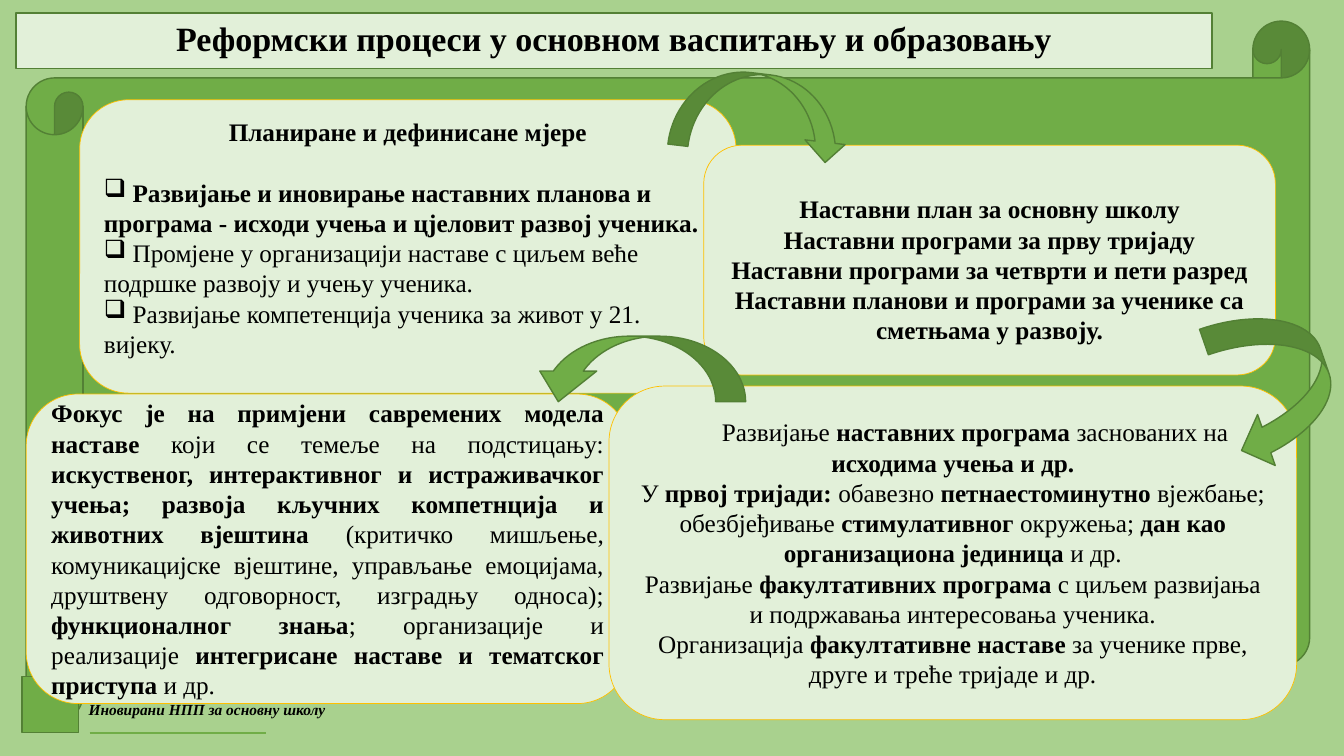
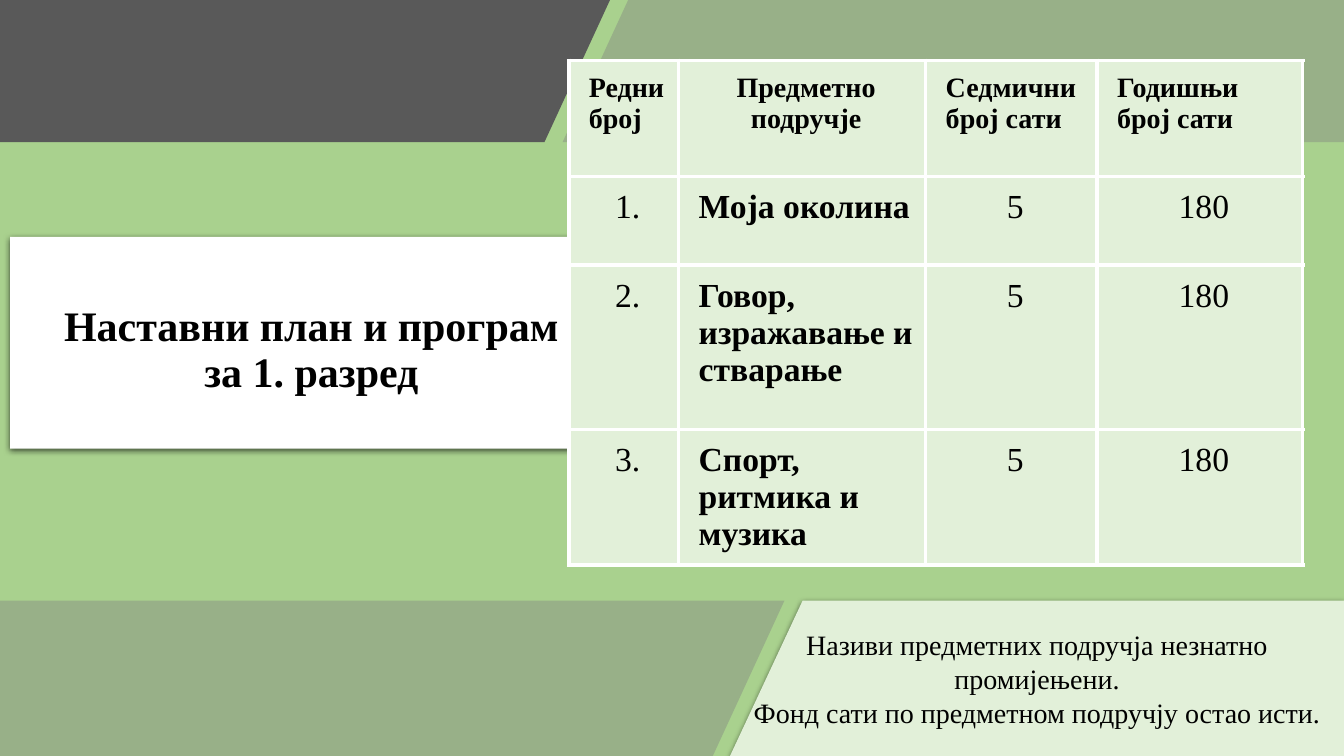
from dataclasses import dataclass
from typing import Optional

from pptx import Presentation
from pptx.dml.color import RGBColor
from pptx.enum.shapes import MSO_CONNECTOR, MSO_SHAPE
from pptx.enum.text import MSO_ANCHOR, MSO_AUTO_SIZE, PP_ALIGN
from pptx.oxml.ns import qn
from pptx.util import Inches, Pt
from lxml.etree import SubElement

BACKGROUND = RGBColor(0xA9, 0xD1, 0x8E)
GREEN = RGBColor(0x70, 0xAD, 0x47)
DARK_GREEN = RGBColor(0x53, 0x80, 0x35)
PALE_GREEN = RGBColor(0xE2, 0xF0, 0xD9)
GOLD = RGBColor(0xFF, 0xC0, 0x00)
DARK_GRAY = RGBColor(0x59, 0x59, 0x59)
GRAY = RGBColor(0x7F, 0x7F, 0x7F)
WHITE = RGBColor(0xFF, 0xFF, 0xFF)
BLACK = RGBColor(0x00, 0x00, 0x00)
FONT = "Times New Roman"
LINE_PITCH = 1.2
BORDER_TAGS = ("a:lnL", "a:lnR", "a:lnT", "a:lnB")


@dataclass(frozen=True)
class Span:
    text: str
    bold: bool = False
    italic: bool = False


@dataclass(frozen=True)
class Passage:
    spans: tuple[Span, ...]
    align: PP_ALIGN = PP_ALIGN.CENTER
    bullet: str = ""
    first_indent: float = 0
    space_after: float = 0


@dataclass(frozen=True)
class Panel:
    left: float
    top: float
    width: float
    height: float
    passages: tuple[Passage, ...]
    top_inset: float = 0.05
    bottom_inset: float = 0.05


@dataclass(frozen=True)
class Arrow:
    kind: MSO_SHAPE
    left: float
    top: float
    width: float
    height: float
    rotation: float
    adjustments: tuple[float, ...] = ()


@dataclass(frozen=True)
class Band:
    points: tuple[tuple[float, float], ...]
    color: RGBColor
    opacity: Optional[int] = None


MEASURES = (
    Passage((Span("Планиране и дефинисане мјере", True),), space_after=21.6),
    Passage((Span(" Развијање и иновирање наставних планова и програма - исходи учења и цјеловит развој ученика.", True),),
            PP_ALIGN.LEFT, "❑"),
    Passage((Span(" Промјене у организацији наставе с циљем веће подршке развоју и учењу ученика."),), PP_ALIGN.LEFT, "❑"),
    Passage((Span(" Развијање компетенција ученика за живот у 21. вијеку."),), PP_ALIGN.LEFT, "❑"),
)
CURRICULA = tuple(
    Passage((Span(text, True),))
    for text in (
        "Наставни план за основну школу",
        "Наставни програми за прву тријаду",
        "Наставни програми за четврти и пети разред",
        "Наставни планови и програми за ученике са сметњама у развоју.",
    )
)
FOCUS = (
    Passage((
        Span("Фокус је на примјени савремених модела наставе", True),
        Span(" који се темеље на подстицању: "),
        Span("искуственог, интерактивног и истраживачког учења; развоја кључних компетнција и животних вјештина", True),
        Span(" (критичко мишљење, комуникацијске вјештине, управљање емоцијама, друштвену одговорност, изградњу односа); "),
        Span("функционалног знања", True),
        Span("; организације и реализације "),
        Span("интегрисане наставе и тематског приступа ", True),
        Span("и др."),
    ), PP_ALIGN.JUSTIFY),
)
PROGRAMS = (
    Passage((
        Span("Развијање "),
        Span("наставних програма ", True),
        Span("заснованих на "),
        Span("исходима учења и др.", True),
    ), first_indent=0.44),
    Passage((
        Span("У "),
        Span("првој тријади: ", True),
        Span("обавезно "),
        Span("петнаестоминутно ", True),
        Span("вјежбање; обезбјеђивање "),
        Span("стимулативног ", True),
        Span("окружења; "),
        Span("дан као организациона јединица ", True),
        Span("и др."),
    )),
    Passage((
        Span("Развијање "),
        Span("факултативних програма ", True),
        Span("с циљем развијања и подржавања интересовања ученика."),
    )),
    Passage((
        Span("Организација "),
        Span("факултативне наставе ", True),
        Span("за ученике прве, друге и треће тријаде и др."),
    )),
)
PANELS = (
    Panel(0.79, 0.99, 6.51, 2.91, MEASURES, bottom_inset=0.23),
    Panel(6.98, 1.44, 5.67, 2.28, CURRICULA, top_inset=0.23),
    Panel(0.26, 3.91, 5.98, 3.07, FOCUS),
    Panel(6.04, 3.83, 6.82, 3.31, PROGRAMS),
)
ARROWS = (
    Arrow(MSO_SHAPE.CURVED_LEFT_ARROW, 7.15, 0.25, 0.8, 1.77, 276.7),
    Arrow(MSO_SHAPE.CURVED_RIGHT_ARROW, 6, 2.59, 0.65, 2.14, 90, (0.457, 0.869, 0.467)),
    Arrow(MSO_SHAPE.CURVED_LEFT_ARROW, 12.12, 3.05, 1.07, 1.54, 340.9),
)
TOP_BANDS = (
    Band(((0, 0), (6.05, 0), (5.4, 1.41), (0, 1.41)), DARK_GRAY),
    Band(((6.23, 0), (13.33, 0), (13.33, 1.41), (5.58, 1.41)), GRAY, 40),
)
NOTE_BAND = Band(((7.96, 5.96), (13.33, 5.96), (13.33, 7.5), (7.24, 7.5)), PALE_GREEN)
BOTTOM_BAND = Band(((0, 5.96), (7.78, 5.96), (7.07, 7.5), (0, 7.5)), GRAY, 40)
NOTES = (
    Passage((Span("Називи предметних подручја незнатно промијењени."),)),
    Passage((Span("Фонд сати по предметном подручју остао исти."),)),
)
COLUMN_WIDTHS = (1.09, 2.45, 1.7, 2.04)
ROW_HEIGHTS = (1.15, 0.88, 1.63, 1.26)
SUBJECT_COLUMN = 1
TIMETABLE = (
    ("Редни број", "Предметно подручје", "Седмични број сати", "Годишњи број сати"),
    ("1.", "Моја околина", "5", "180"),
    ("2.", "Говор, изражавање и стварање", "5", "180"),
    ("3.", "Спорт, ритмика и музика", "5", "180"),
)


def add_span(paragraph, span: Span, size: float) -> None:
    """Add one formatted run to a paragraph."""
    run = paragraph.add_run()
    run.text = span.text
    run.font.name = FONT
    run.font.size = Pt(size)
    run.font.bold = span.bold
    run.font.italic = span.italic
    run.font.color.rgb = BLACK


def write_passages(frame, passages: tuple[Passage, ...], size: float) -> None:
    """Fill a text frame with passages."""
    frame.word_wrap = True
    for index, passage in enumerate(passages):
        paragraph = frame.add_paragraph() if index else frame.paragraphs[0]
        paragraph.alignment = passage.align
        paragraph.line_spacing = Pt(size * LINE_PITCH)
        paragraph.space_after = Pt(passage.space_after)
        properties = paragraph._p.get_or_add_pPr()
        if passage.first_indent:
            properties.set("indent", str(Inches(passage.first_indent)))
        if passage.bullet:
            SubElement(properties, qn("a:buChar")).set("char", passage.bullet)
        for span in passage.spans:
            add_span(paragraph, span, size)


def paint(shape, fill: RGBColor, line: Optional[RGBColor] = None, line_width: float = 1) -> None:
    """Set fill and outline and remove the theme shadow."""
    shape.fill.solid()
    shape.fill.fore_color.rgb = fill
    if line is None:
        shape.line.fill.background()
    else:
        shape.line.color.rgb = line
        shape.line.width = Pt(line_width)
    shape.shadow.inherit = False


def cast_shadow(shape) -> None:
    """Give a painted shape a soft shadow below."""
    effects = shape.element.spPr.find(qn("a:effectLst"))
    shadow = SubElement(effects, qn("a:outerShdw"), blurRad=str(Pt(4.5)), dist=str(Pt(1.5)), dir="5400000")
    color = SubElement(shadow, qn("a:srgbClr"), val=str(BLACK))
    SubElement(color, qn("a:alpha"), val="63000")


def add_titled_slide(deck, lines: tuple[str, ...], box: tuple[float, ...], size: float):
    """Add a slide with the shared background and title style."""
    slide = deck.slides.add_slide(deck.slide_layouts[5])
    slide.background.fill.solid()
    slide.background.fill.fore_color.rgb = BACKGROUND
    title = slide.shapes.title
    title.left, title.top, title.width, title.height = map(Inches, box)
    frame = title.text_frame
    frame.auto_size = MSO_AUTO_SIZE.NONE
    frame.word_wrap = True
    paragraph = frame.paragraphs[0]
    paragraph.alignment = PP_ALIGN.CENTER
    paragraph.line_spacing = 0.9
    for index, line in enumerate(lines):
        if index:
            paragraph.add_line_break()
        add_span(paragraph, Span(line, True), size)
    return slide


def add_preset(slide, kind: MSO_SHAPE, left: float, top: float, width: float, height: float):
    """Add a preset shape measured in inches."""
    return slide.shapes.add_shape(kind, Inches(left), Inches(top), Inches(width), Inches(height))


def add_panel(slide, panel: Panel) -> None:
    """Draw a rounded text panel."""
    shape = add_preset(slide, MSO_SHAPE.ROUNDED_RECTANGLE, panel.left, panel.top, panel.width, panel.height)
    paint(shape, PALE_GREEN, GOLD, 0.5)
    frame = shape.text_frame
    frame.vertical_anchor = MSO_ANCHOR.MIDDLE
    frame.margin_top = Inches(panel.top_inset)
    frame.margin_bottom = Inches(panel.bottom_inset)
    write_passages(frame, panel.passages, 18)


def add_arrow(slide, arrow: Arrow) -> None:
    """Draw a curved arrow between panels."""
    shape = add_preset(slide, arrow.kind, arrow.left, arrow.top, arrow.width, arrow.height)
    shape.rotation = arrow.rotation
    for index, value in enumerate(arrow.adjustments):
        shape.adjustments[index] = value
    paint(shape, GREEN, DARK_GREEN)


def add_band(slide, band: Band):
    """Draw a slanted band."""
    start, *corners = [(Inches(x), Inches(y)) for x, y in band.points]
    builder = slide.shapes.build_freeform(*start)
    builder.add_line_segments(corners, close=True)
    shape = builder.convert_to_shape()
    paint(shape, band.color)
    if band.opacity is not None:
        color = shape.element.spPr.find(qn("a:solidFill"))[0]
        SubElement(color, qn("a:alpha"), val=str(band.opacity * 1000))
    return shape


def format_cell(cell, text: str, row: int, column: int) -> None:
    """Write a timetable cell with white borders."""
    properties = cell._tc.get_or_add_tcPr()
    for tag in BORDER_TAGS:
        border = SubElement(properties, qn(tag), w=str(Pt(3)))
        SubElement(SubElement(border, qn("a:solidFill")), qn("a:srgbClr"), val=str(WHITE))
    cell.fill.solid()
    cell.fill.fore_color.rgb = PALE_GREEN
    cell.margin_left = Inches(0.2)
    cell.margin_right = cell.margin_top = cell.margin_bottom = Inches(0.12)
    is_header, is_subject = row == 0, column == SUBJECT_COLUMN
    paragraph = cell.text_frame.paragraphs[0]
    paragraph.alignment = PP_ALIGN.CENTER if is_header == is_subject else PP_ALIGN.LEFT
    add_span(paragraph, Span(text, is_header or is_subject), 20 if is_header else 24)


def add_timetable(slide) -> None:
    """Add the table of subjects and hours."""
    table = slide.shapes.add_table(
        len(ROW_HEIGHTS), len(COLUMN_WIDTHS), Inches(5.64), Inches(0.6),
        Inches(sum(COLUMN_WIDTHS)), Inches(sum(ROW_HEIGHTS))).table
    table.first_row = table.horz_banding = False
    for column, width in zip(table.columns, COLUMN_WIDTHS):
        column.width = Inches(width)
    for row, height in zip(table.rows, ROW_HEIGHTS):
        row.height = Inches(height)
    for row, texts in enumerate(TIMETABLE):
        for column, text in enumerate(texts):
            format_cell(table.cell(row, column), text, row, column)


def build_reform_slide(deck) -> None:
    """Build the slide on reform processes."""
    slide = add_titled_slide(deck, ("Реформски процеси у основном васпитању и образовању",), (0.16, 0.13, 11.86, 0.55), 24.3)
    paint(slide.shapes.title, PALE_GREEN, DARK_GREEN)
    slide.shapes.title.text_frame.vertical_anchor = MSO_ANCHOR.MIDDLE
    scroll = add_preset(slide, MSO_SHAPE.HORIZONTAL_SCROLL, 0.26, 0.21, 12.73, 6.96)
    scroll.adjustments[0] = 0.081
    paint(scroll, GREEN, DARK_GREEN)
    paint(add_preset(slide, MSO_SHAPE.RECTANGLE, 0.22, 6.71, 0.56, 0.56), GREEN, DARK_GREEN)
    footer = slide.shapes.add_textbox(Inches(0.78), Inches(6.9), Inches(3.89), Inches(0.29))
    write_passages(footer.text_frame, (Passage((Span("Иновирани НПП за основну школу", True, True),), PP_ALIGN.LEFT),), 11)
    rule = slide.shapes.add_connector(MSO_CONNECTOR.STRAIGHT, Inches(0.89), Inches(7.27), Inches(2.64), Inches(7.27))
    rule.line.color.rgb = GREEN
    rule.line.width = Pt(1.5)
    SubElement(rule.element.spPr, qn("a:effectLst"))
    for panel in PANELS:
        add_panel(slide, panel)
    for arrow in ARROWS:
        add_arrow(slide, arrow)


def build_timetable_slide(deck) -> None:
    """Build the slide with the first grade plan."""
    slide = add_titled_slide(deck, ("Наставни план и програм", "за 1. разред"), (0.1, 2.35, 5.98, 2.1), 30)
    title = slide.shapes.title
    paint(title, WHITE)
    cast_shadow(title)
    title.text_frame.vertical_anchor = MSO_ANCHOR.BOTTOM
    title.text_frame.margin_bottom = Inches(0.52)
    for band in TOP_BANDS:
        add_band(slide, band)
    note = add_band(slide, NOTE_BAND)
    cast_shadow(note)
    note.text_frame.vertical_anchor = MSO_ANCHOR.MIDDLE
    write_passages(note.text_frame, NOTES, 20)
    add_band(slide, BOTTOM_BAND)
    add_timetable(slide)


def main() -> None:
    """Build and save the presentation."""
    deck = Presentation()
    deck.slide_width, deck.slide_height = Inches(13.33), Inches(7.5)
    build_reform_slide(deck)
    build_timetable_slide(deck)
    deck.save("out.pptx")


if __name__ == "__main__":
    main()
